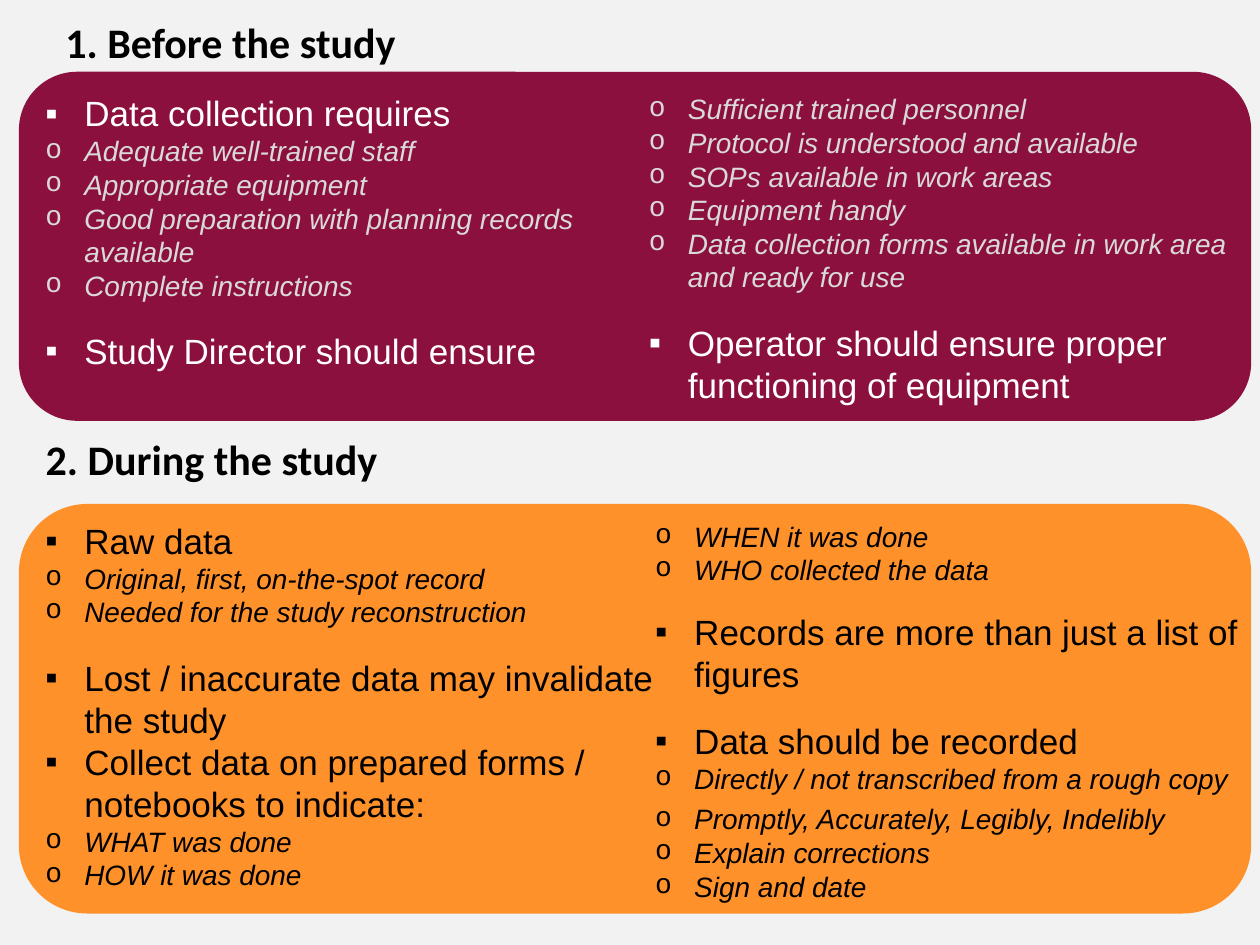
from lxml import etree
from pptx import Presentation
from pptx.dml.color import RGBColor
from pptx.enum.shapes import MSO_SHAPE
from pptx.enum.text import MSO_ANCHOR, MSO_AUTO_SIZE, PP_ALIGN
from pptx.oxml.ns import qn
from pptx.util import Inches, Pt

ROUNDED = MSO_SHAPE.ROUNDED_RECTANGLE
TOP, MIDDLE = MSO_ANCHOR.TOP, MSO_ANCHOR.MIDDLE
FIXED = MSO_AUTO_SIZE.NONE
LEFT, CENTER = PP_ALIGN.LEFT, PP_ALIGN.CENTER

COLORS = {
    "page": "F2F2F2",
    "before": "8C103D",
    "during": "FF912B",
    "light": "FFFFFF",
    "muted": "D9D9D9",
    "dark": "000000",
}
LIST_LEFT = 0.36
INDENT = 0.31
COMPARISON_LAYOUT = 4
LEVELS = [
    {"bullet": "▪", "bullet_font": "Arial", "size": 20, "italic": False},
    {"bullet": "o", "bullet_font": "Courier New", "size": 16, "italic": True},
]

# Each list item is (level, text, points of space before).
BEFORE = [
    [
        (0, "Data collection requires", 0),
        (1, "Adequate well-trained staff", 0),
        (1, "Appropriate equipment", 0),
        (1, "Good preparation with planning records available", 0),
        (1, "Complete instructions", 0),
        (0, "Study Director should ensure", 16),
    ],
    [
        (1, "Sufficient trained personnel", 0),
        (1, "Protocol is understood and available", 0),
        (1, "SOPs available in work areas", 0),
        (1, "Equipment handy", 0),
        (1, "Data collection forms available in work area and ready for use", 0),
        (0, "Operator should ensure proper functioning of equipment", 16),
    ],
]
DURING = [
    [
        (0, "Raw data", 0),
        (1, "Original, first, on-the-spot record", 0),
        (1, "Needed for the study reconstruction", 0),
        (0, "Lost / inaccurate data may invalidate the study", 16),
        (0, "Collect data on prepared forms / notebooks to indicate:", 0),
        (1, "WHAT was done", 0),
        (1, "HOW it was done", 0),
    ],
    [
        (1, "WHEN it was done", 0),
        (1, "WHO collected the data", 0),
        (0, "Records are more than just a list of figures", 14),
        (0, "Data should be recorded", 14),
        (1, "Directly / not transcribed from a rough copy", 0),
        (1, "Promptly, Accurately, Legibly, Indelibly", 4),
        (1, "Explain corrections", 0),
        (1, "Sign and date", 0),
    ],
]


def rgb(name):
    """Return the named colour."""
    return RGBColor.from_string(COLORS[name])


def place(box, left, top, width, height):
    """Move and size a box, in inches."""
    box.left, box.top = Inches(left), Inches(top)
    box.width, box.height = Inches(width), Inches(height)


def add_panel(page, color, top, height):
    """Add a rounded panel behind the text."""
    panel = page.shapes.add_shape(
        ROUNDED, Inches(0.15), Inches(top), Inches(9.78), Inches(height))
    panel.fill.solid()
    panel.fill.fore_color.rgb = rgb(color)
    panel.line.fill.background()
    panel.shadow.inherit = False
    panel.element.getparent().insert(2, panel.element)


def fill_heading(box, text, left, top):
    """Place and format a section heading."""
    place(box, left, top, 2.86, 0.5)
    frame = box.text_frame
    frame.text = text
    frame.word_wrap = False
    frame.auto_size = FIXED
    frame.vertical_anchor = MIDDLE
    para = frame.paragraphs[0]
    para.alignment = CENTER
    para.font.name, para.font.size, para.font.bold = "Calibri", Pt(24), True
    para.font.color.rgb = rgb("dark")


def set_bullet(para, font, char):
    """Give a paragraph a hanging bullet."""
    props = para._p.get_or_add_pPr()
    props.set("marL", str(Inches(INDENT)))
    props.set("indent", str(-Inches(INDENT)))
    etree.SubElement(props, qn("a:buFont")).set("typeface", font)
    etree.SubElement(props, qn("a:buChar")).set("char", char)


def fill_list(box, items, colors):
    """Write a two-level bullet list into a body placeholder."""
    frame = box.text_frame
    frame.word_wrap = True
    frame.auto_size = FIXED
    frame.vertical_anchor = TOP
    frame.margin_left = frame.margin_right = 0
    frame.margin_top = frame.margin_bottom = 0
    frame.text = "\n".join(text for _, text, _ in items)
    for para, (level, _, gap) in zip(frame.paragraphs, items):
        style = LEVELS[level]
        para.level = level
        set_bullet(para, style["bullet_font"], style["bullet"])
        para.alignment = LEFT
        para.line_spacing = 1.0
        para.space_before, para.space_after = Pt(gap), Pt(0)
        para.font.name, para.font.size = "Arial", Pt(style["size"])
        para.font.bold, para.font.italic = False, style["italic"]
        para.font.color.rgb = rgb(colors[level])


def fill_columns(boxes, columns, top, width, height, colors):
    """Set lists side by side in equal columns."""
    for index, (box, items) in enumerate(zip(boxes, columns)):
        place(box, LIST_LEFT + index * width, top, width, height)
        fill_list(box, items, colors)


def main():
    """Build the slide and save it."""
    deck = Presentation()
    deck.slide_width, deck.slide_height = Inches(10), Inches(7.5)
    page = deck.slides.add_slide(deck.slide_layouts[COMPARISON_LAYOUT])
    page.background.fill.solid()
    page.background.fill.fore_color.rgb = rgb("page")

    add_panel(page, "before", 0.57, 2.77)
    add_panel(page, "during", 4, 3.25)

    title, *bodies = page.placeholders
    fill_columns(bodies[:2], BEFORE, 0.73, 4.79, 2.59, ("light", "muted"))
    fill_columns(bodies[2:], DURING, 4.12, 4.84, 3.27, ("dark", "dark"))

    fill_heading(title, "1. Before the study", 0.4, 0.08)
    fill_heading(page.shapes.add_textbox(0, 0, 0, 0), "2. During the study", 0.25, 3.39)
    deck.save("out.pptx")


if __name__ == "__main__":
    main()
